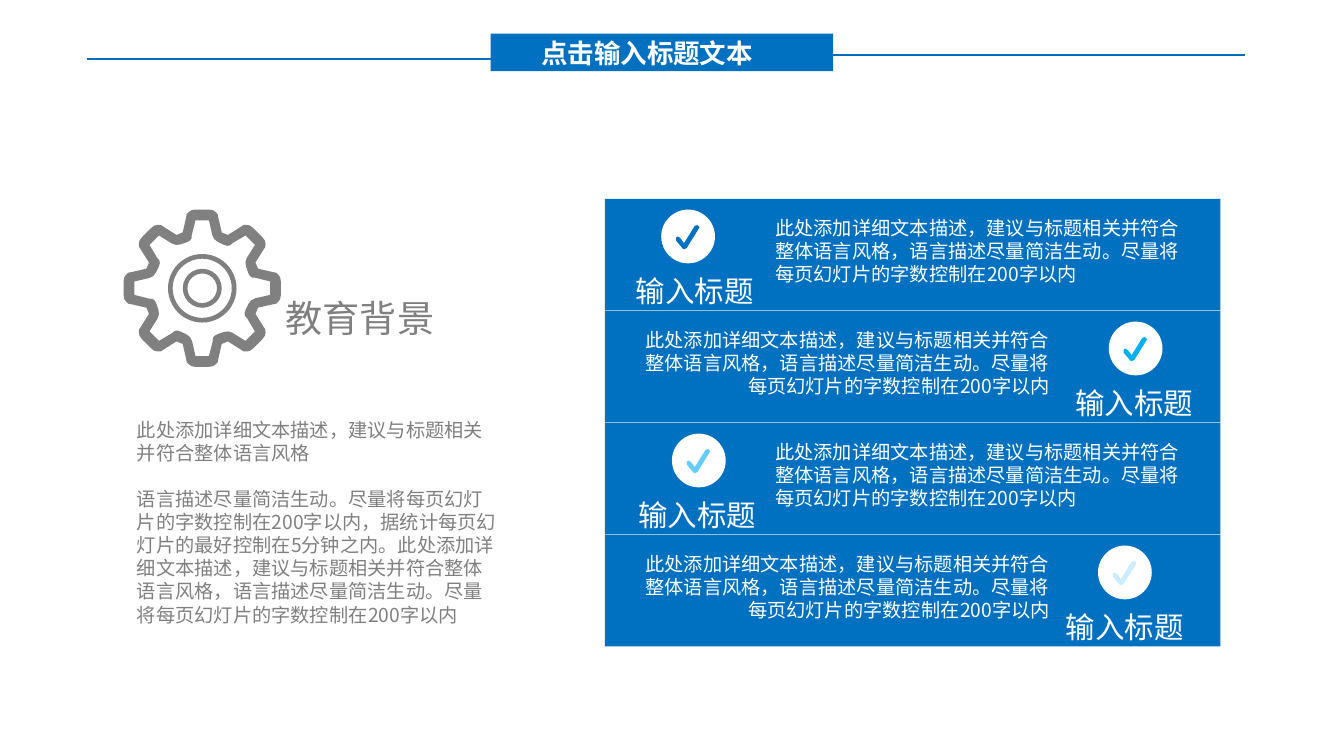
import math
from dataclasses import dataclass

from lxml import etree
from pptx import Presentation
from pptx.dml.color import RGBColor
from pptx.enum import shapes, text
from pptx.oxml import ns
from pptx.util import Inches, Pt

FONT = "Noto Sans CJK SC"
BLUE = RGBColor(0x00, 0x70, 0xC0)
RULE_BLUE = RGBColor(0x00, 0x6E, 0xBC)
SKY = RGBColor(0x00, 0xB0, 0xF0)
LIGHT_BLUE = RGBColor(0x66, 0xCC, 0xFF)
PALE_BLUE = RGBColor(0xCC, 0xEC, 0xFF)
GREY = RGBColor(0x80, 0x80, 0x80)
WHITE = RGBColor(0xFF, 0xFF, 0xFF)

LEFT, CENTER, RIGHT = (text.PP_ALIGN.LEFT, text.PP_ALIGN.CENTER,
                       text.PP_ALIGN.RIGHT)
LINE_RATIO = 1.2
BODY_SIZE = 10.3

DETAIL = ("此处添加详细文本描述，建议与标题相关并符合整体语言风格，"
          "语言描述尽量简洁生动。尽量将每页幻灯片的字数控制在200字以内")
BACKGROUND = (
    "此处添加详细文本描述，建议与标题相关并符合整体语言风格",
    "语言描述尽量简洁生动。尽量将每页幻灯片的字数控制在200字以内，"
    "据统计每页幻灯片的最好控制在5分钟之内。" + DETAIL,
)

Point = tuple[float, float]

# One gear tooth, relative to the gear centre; the others are turned copies
TOOTH_HALF = [(0.05, -0.585), (0.08, -0.58), (0.1, -0.566), (0.115, -0.55),
              (0.12, -0.525), (0.145, -0.415)]
OUTER_TOOTH = [(-x, y) for x, y in reversed(TOOTH_HALF)] + TOOTH_HALF
INNER_TOOTH = [(-0.05, -0.505), (0.05, -0.505), (0.075, -0.395),
               (0.09, -0.365), (0.115, -0.345), (0.155, -0.325),
               (0.185, -0.315), (0.205, -0.318), (0.225, -0.335)]
CHECK_MARK = [(0.06, 0.185), (0.05, 0.18), (0, 0.12), (0, 0.1), (0.01, 0.09),
              (0.03, 0.1), (0.06, 0.14), (0.14, 0.01), (0.16, 0.005),
              (0.175, 0.02), (0.17, 0.03), (0.08, 0.175)]


@dataclass
class Box:
    left: float
    top: float
    width: float
    height: float

    def lengths(self) -> list[int]:
        return [Inches(n) for n in (self.left, self.top, self.width, self.height)]


@dataclass
class Row:
    detail_left: float
    detail_align: text.PP_ALIGN
    heading_left: float
    badge_left: float
    check_color: RGBColor


@dataclass
class Rule:
    start: float
    end: float
    y: float


ROWS = [
    Row(5.67, LEFT, 4.42, 4.92, BLUE),
    Row(4.58, RIGHT, 7.69, 8.25, SKY),
    Row(5.67, LEFT, 4.44, 5.0, LIGHT_BLUE),
    Row(4.58, RIGHT, 7.62, 8.17, PALE_BLUE),
]
ROWS_TOP, ROW_PITCH = 1.48, 5 / 6
RULES = [Rule(0.65, 3.73, 0.44), Rule(6.18, 9.26, 0.41)]


def paint(shape, color: RGBColor) -> None:
    shape.shadow.inherit = False
    shape.fill.solid()
    shape.fill.fore_color.rgb = color
    shape.line.fill.background()


def add_preset(parent, kind, box: Box, color: RGBColor):
    shape = parent.add_shape(kind, *box.lengths())
    paint(shape, color)
    return shape


def add_outline(parent, contours: list[list[Point]], origin: Point,
                color: RGBColor) -> None:
    """Draw closed contours given in inches from the origin."""
    placed = [[(Inches(origin[0] + x), Inches(origin[1] + y)) for x, y in contour]
              for contour in contours]
    builder = parent.build_freeform(*placed[0][0])
    for index, contour in enumerate(placed):
        if index:
            builder.move_to(*contour[0])
        builder.add_line_segments(contour[1:], close=True)
    paint(builder.convert_to_shape(), color)


def add_text(parent, box: Box, paragraphs: tuple[str, ...], size: float,
             color: RGBColor, align=LEFT, bold: bool = False) -> None:
    frame = parent.add_textbox(*box.lengths()).text_frame
    frame.word_wrap = True
    line_height = Pt(round(size * LINE_RATIO, 1))
    for index, words in enumerate(paragraphs):
        paragraph = frame.add_paragraph() if index else frame.paragraphs[0]
        spacing = {"alignment": align, "line_spacing": line_height,
                   "space_before": line_height if index else Pt(0)}
        for name, value in spacing.items():
            setattr(paragraph, name, value)
        run = paragraph.add_run()
        run.text = words
        for name, value in {"name": FONT, "size": Pt(size), "bold": bold}.items():
            setattr(run.font, name, value)
        run.font.color.rgb = color
        east_asian = etree.SubElement(run._r.get_or_add_rPr(), ns.qn("a:ea"))
        east_asian.set("typeface", FONT)


def add_rule(parent, rule: Rule) -> None:
    line = parent.add_connector(
        shapes.MSO_CONNECTOR.STRAIGHT, Inches(rule.start), Inches(rule.y),
        Inches(rule.end), Inches(rule.y))
    line.line.color.rgb = RULE_BLUE
    line.line.width = Pt(0.75)
    etree.SubElement(line._element.spPr, ns.qn("a:effectLst"))


def around(tooth: list[Point], count: int = 8) -> list[Point]:
    angles = [2 * math.pi * i / count for i in range(count)]
    return [(x * math.cos(a) - y * math.sin(a), x * math.sin(a) + y * math.cos(a))
            for a in angles for x, y in tooth]


def add_gear(parent, center: Point) -> None:
    add_outline(parent, [around(OUTER_TOOTH), around(INNER_TOOTH)[::-1]],
                center, GREY)
    for diameter in (0.51, 0.29):
        ring = Box(center[0] - diameter / 2, center[1] - diameter / 2,
                   diameter, diameter)
        donut = add_preset(parent, shapes.MSO_SHAPE.DONUT, ring, GREY)
        donut.adjustments[0] = 0.035 / diameter


def add_row(parent, row: Row, top: float) -> None:
    add_preset(parent, shapes.MSO_SHAPE.RECTANGLE, Box(4.5, top, 4.58, 0.83), BLUE)
    add_text(parent, Box(row.detail_left, top + 0.08, 3.33, 0.62), (DETAIL,),
             BODY_SIZE, WHITE, row.detail_align)
    add_text(parent, Box(row.heading_left, top + 0.5, 1.5, 0.37), ("输入标题",),
             15.8, WHITE, CENTER)
    add_preset(parent, shapes.MSO_SHAPE.OVAL,
               Box(row.badge_left, top + 0.08, 0.4, 0.4), WHITE)
    add_outline(parent, [CHECK_MARK], (row.badge_left + 0.11, top + 0.19),
                row.check_color)


def main() -> None:
    deck = Presentation()
    # Widescreen, 16:9
    deck.slide_width, deck.slide_height = Inches(10), Inches(10 * 9 / 16)
    slide = deck.slides.add_slide(deck.slide_layouts[6])

    # Education background
    add_text(slide.shapes, Box(0.92, 3.06, 2.91, 1.66), BACKGROUND, BODY_SIZE, GREY)
    add_text(slide.shapes, Box(1.5, 2.15, 1.83, 0.43), ("教育背景",), 19.9, GREY, RIGHT)
    add_gear(slide.shapes.add_group_shape().shapes, (1.505, 2.145))

    # Checked rows
    for index, row in enumerate(ROWS):
        add_row(slide.shapes.add_group_shape().shapes, row,
                ROWS_TOP + index * ROW_PITCH)

    # Title banner
    banner = slide.shapes.add_group_shape().shapes
    add_preset(banner, shapes.MSO_SHAPE.RECTANGLE, Box(3.65, 0.25, 2.55, 0.28), BLUE)
    add_text(banner, Box(3.93, 0.23, 1.86, 0.34), ("点击输入标题文本",), 14.2,
             WHITE, bold=True)
    for rule in RULES:
        add_rule(banner, rule)

    deck.save("out.pptx")


if __name__ == "__main__":
    main()
